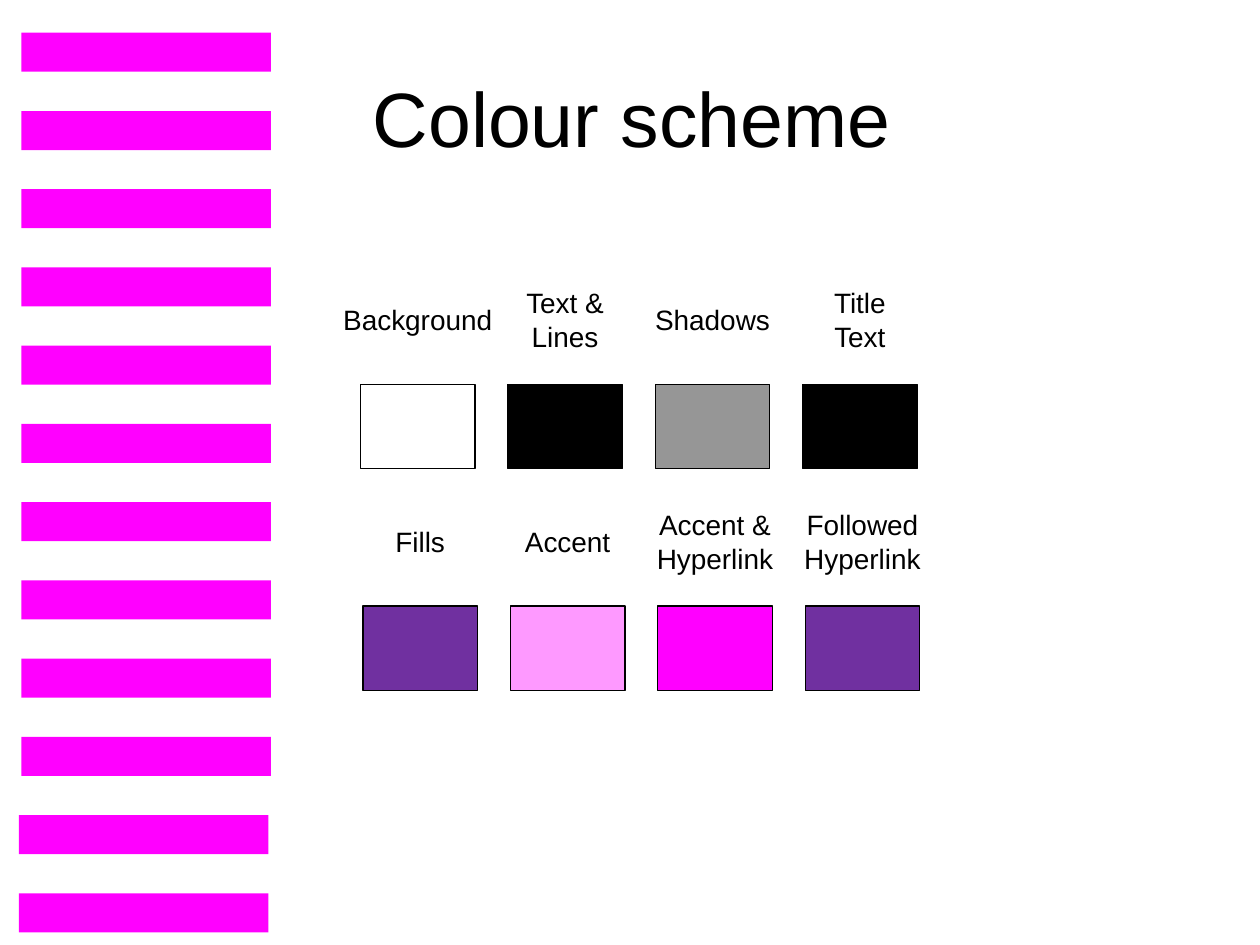
"""Build a slide that shows the colour scheme as two rows of labelled swatches."""
from pptx import Presentation
from pptx.dml.color import RGBColor
from pptx.enum.shapes import MSO_SHAPE
from pptx.enum.text import MSO_ANCHOR, MSO_AUTO_SIZE, PP_ALIGN
from pptx.util import Inches, Pt

WHITE = RGBColor(0xFF, 0xFF, 0xFF)
BLACK = RGBColor(0x00, 0x00, 0x00)
GREY = RGBColor(0x96, 0x96, 0x96)
PURPLE = RGBColor(0x70, 0x30, 0xA0)
PINK = RGBColor(0xFE, 0x99, 0xFF)
MAGENTA = RGBColor(0xFF, 0x00, 0xFF)

FONT = "Arial"
STRIPE_COUNT = 12
STRIPE_TOP, STRIPE_BOTTOM = 0.26, 7.4
STRIPE_WIDTH, STRIPE_HEIGHT = 1.98, 0.31
SWATCH_WIDTH, SWATCH_HEIGHT, SWATCH_STEP = 0.91, 0.67, 1.17
LABEL_RISE = 0.51

TOP_ROW = [
    ("Background", 1.42, WHITE),
    ("Text &\nLines", 0.87, BLACK),
    ("Shadows", 1.14, GREY),
    ("Title\vText", 0.66, BLACK),
]
BOTTOM_ROW = [
    ("Fills", 0.63, PURPLE),
    ("Accent", 0.91, PINK),
    ("Accent &\nHyperlink", 1.16, MAGENTA),
    ("Followed\nHyperlink", 1.16, PURPLE),
]


def add_box(slide, left, top, width, height, fill, outline=None):
    box = slide.shapes.add_shape(
        MSO_SHAPE.RECTANGLE, Inches(left), Inches(top), Inches(width), Inches(height)
    )
    box.shadow.inherit = False
    box.fill.solid()
    box.fill.fore_color.rgb = fill
    if outline is None:
        box.line.fill.background()
    else:
        box.line.color.rgb = outline
        box.line.width = Pt(0.75)


def add_text(slide, text, left, top, width, height, *, size, wrap=True,
             anchor=MSO_ANCHOR.TOP, fit=MSO_AUTO_SIZE.NONE):
    frame = slide.shapes.add_textbox(
        Inches(left), Inches(top), Inches(width), Inches(height)
    ).text_frame
    frame.text = text
    frame.word_wrap = wrap
    frame.auto_size = fit
    frame.vertical_anchor = anchor
    for paragraph in frame.paragraphs:
        paragraph.alignment = PP_ALIGN.CENTER
        for run in paragraph.runs:
            run.font.name = FONT
            run.font.size = Pt(size)
            run.font.color.rgb = BLACK


def add_stripes(slide):
    step = (STRIPE_BOTTOM - STRIPE_HEIGHT - STRIPE_TOP) / (STRIPE_COUNT - 1)
    for index in range(STRIPE_COUNT):
        left = 0.17 if index < STRIPE_COUNT - 2 else 0.15
        add_box(slide, left, STRIPE_TOP + index * step,
                STRIPE_WIDTH, STRIPE_HEIGHT, MAGENTA)


def add_swatch_row(slide, swatches, left, top):
    for index, (label, label_width, colour) in enumerate(swatches):
        swatch_left = left + index * SWATCH_STEP
        add_box(slide, swatch_left, top, SWATCH_WIDTH, SWATCH_HEIGHT, colour, BLACK)
        label_height = 0.37 if len(label.splitlines()) == 1 else 0.64
        add_text(slide, label, swatch_left + (SWATCH_WIDTH - label_width) / 2,
                 top - LABEL_RISE - label_height / 2, label_width, label_height,
                 size=16, wrap=False, fit=MSO_AUTO_SIZE.SHAPE_TO_FIT_TEXT)


def main():
    deck = Presentation()
    deck.slide_width, deck.slide_height = Inches(10), Inches(7.5)
    slide = deck.slides.add_slide(deck.slide_layouts[6])
    slide.background.fill.solid()
    slide.background.fill.fore_color.rgb = WHITE
    add_stripes(slide)
    add_text(slide, "Colour scheme", 0.53, 0.3, 8.97, 1.25,
             size=44, anchor=MSO_ANCHOR.MIDDLE)
    add_swatch_row(slide, TOP_ROW, 2.86, 3.05)
    add_swatch_row(slide, BOTTOM_ROW, 2.88, 4.81)
    deck.save("out.pptx")


if __name__ == "__main__":
    main()
